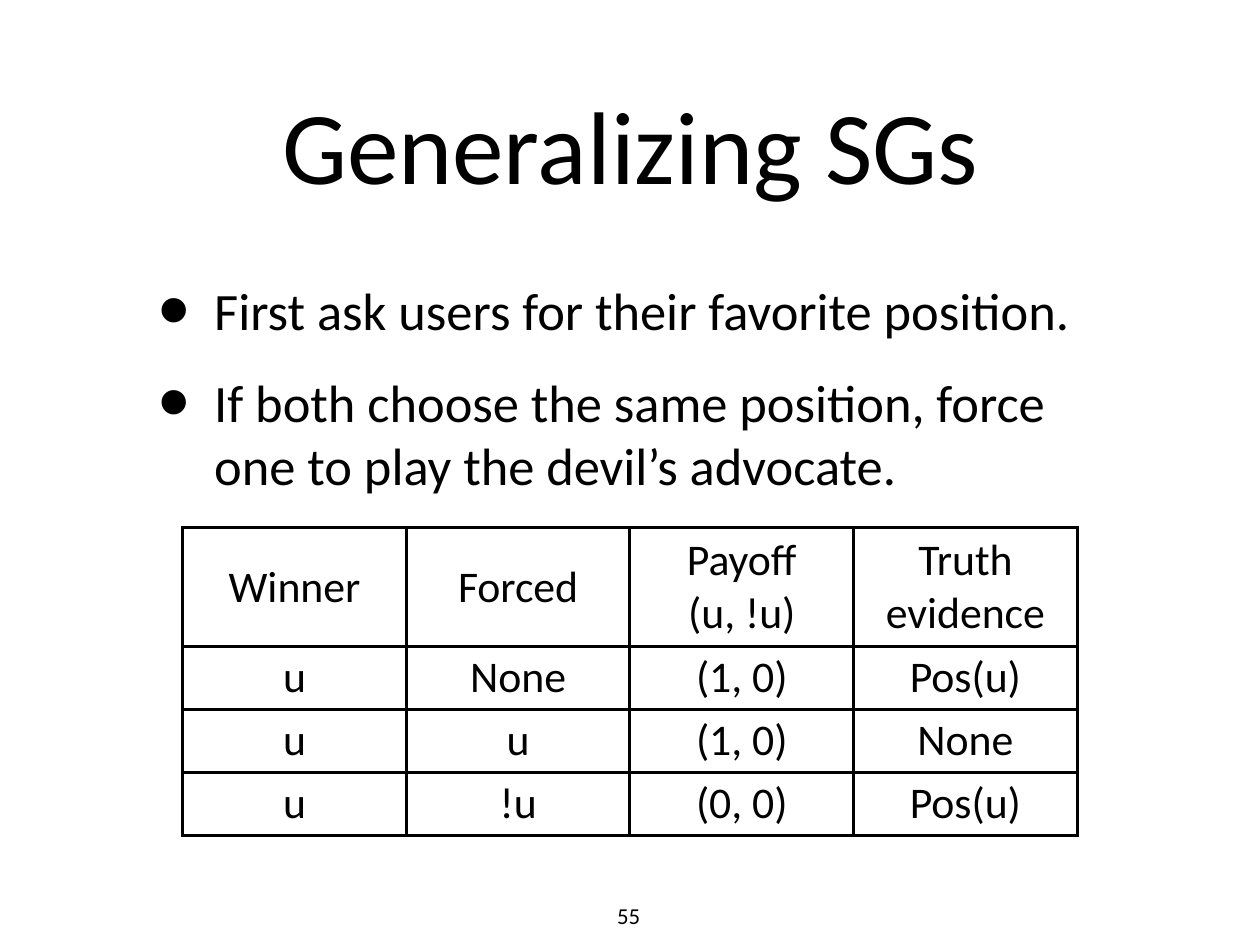
from dataclasses import dataclass

from lxml.etree import SubElement
from pptx import Presentation
from pptx.dml.color import RGBColor
from pptx.enum.text import MSO_ANCHOR, MSO_AUTO_SIZE, PP_ALIGN
from pptx.oxml import parse_xml
from pptx.oxml.ns import nsdecls, qn
from pptx.util import Inches, Pt

SLIDE_WIDTH, SLIDE_HEIGHT = Inches(10), Inches(7.5)


@dataclass(frozen=True)
class Theme:
    font: str = "Calibri"
    ink: str = "000000"
    paper: str = "FFFFFF"
    title_size: float = 59
    body_size: float = 30
    cell_size: float = 25
    number_size: float = 13
    border_width: float = 2
    bullet_percent: int = 171
    inset: float = 0.04


@dataclass(frozen=True)
class Box:
    """A rectangle in percent of the slide's width and height."""
    left: float
    top: float
    width: float
    height: float

    def lengths(self) -> tuple[int, int, int, int]:
        return (int(SLIDE_WIDTH * self.left / 100), int(SLIDE_HEIGHT * self.top / 100),
                int(SLIDE_WIDTH * self.width / 100), int(SLIDE_HEIGHT * self.height / 100))


THEME = Theme()
TITLE_BOX = Box(9.8, 2.67, 80.5, 25.07)
BODY_BOX = Box(9.8, 28.4, 80.5, 25.07)
TABLE_BOX = Box(14.5, 55.87, 71, 32.53)
NUMBER_BOX = Box(48.6, 94.93, 2.6, 3.73)

BULLETS = (
    "First ask users for their favorite position.",
    "If both choose the same position, force one to play the devil’s advocate.",
)
PAYOFF_ROWS = (
    ("Winner", "Forced", "Payoff\n(u, !u)", "Truth evidence"),
    ("u", "None", "(1, 0)", "Pos(u)"),
    ("u", "u", "(1, 0)", "None"),
    ("u", "!u", "(0, 0)", "Pos(u)"),
)
HEADER_SHARE = 0.385  # share of the table's height


def style_paragraphs(text_frame, size: float, alignment=PP_ALIGN.CENTER) -> None:
    for paragraph in text_frame.paragraphs:
        paragraph.alignment = alignment
        paragraph.font.name = THEME.font
        paragraph.font.size = Pt(size)
        paragraph.font.color.rgb = RGBColor.from_string(THEME.ink)


def set_insets(target, horizontal: float, vertical: float) -> None:
    target.margin_left = target.margin_right = Inches(horizontal)
    target.margin_top = target.margin_bottom = Inches(vertical)


def place(shape, box: Box) -> None:
    shape.left, shape.top, shape.width, shape.height = box.lengths()


def fill_placeholder(shape, box: Box, text: str):
    place(shape, box)
    text_frame = shape.text_frame
    text_frame.text = text
    text_frame.word_wrap = True
    text_frame.auto_size = MSO_AUTO_SIZE.NONE
    text_frame.vertical_anchor = MSO_ANCHOR.MIDDLE
    set_insets(text_frame, THEME.inset, THEME.inset)
    return text_frame


def add_bullet(paragraph) -> None:
    paragraph.space_before = Pt(16.9)
    properties = paragraph._p.get_or_add_pPr()
    properties.set("marL", str(Inches(0.68)))
    properties.set("indent", str(Inches(-0.44)))
    SubElement(properties, qn("a:buSzPct"), val=str(THEME.bullet_percent * 1000))
    SubElement(properties, qn("a:buChar"), char="•")


def add_borders(cell) -> None:
    properties = cell._tc.get_or_add_tcPr()
    for position, side in enumerate("LRTB"):
        properties.insert(position, parse_xml(
            f'<a:ln{side} {nsdecls("a")} w="{Pt(THEME.border_width)}"><a:solidFill>'
            f'<a:srgbClr val="{THEME.ink}"/></a:solidFill></a:ln{side}>'))


def add_payoff_table(slide) -> None:
    columns = len(PAYOFF_ROWS[0])
    frame = slide.shapes.add_table(len(PAYOFF_ROWS), columns, *TABLE_BOX.lengths())
    table, height = frame.table, frame.height
    table.first_row = table.horz_banding = False
    header_height = int(height * HEADER_SHARE)
    for index, row in enumerate(table.rows):
        row.height = (height - header_height) // (len(PAYOFF_ROWS) - 1) if index else header_height
        for cell, text in zip(row.cells, PAYOFF_ROWS[index]):
            cell.text = text
            cell.vertical_anchor = MSO_ANCHOR.MIDDLE
            set_insets(cell, THEME.inset, THEME.inset)
            cell.fill.background()
            add_borders(cell)
            style_paragraphs(cell.text_frame, THEME.cell_size)


def add_page_number(slide, number: str) -> None:
    text_frame = slide.shapes.add_textbox(*NUMBER_BOX.lengths()).text_frame
    text_frame.text = number
    text_frame.word_wrap = False
    # No side insets, so that both digits fit on one line
    set_insets(text_frame, 0, THEME.inset)
    style_paragraphs(text_frame, THEME.number_size)


def main() -> None:
    presentation = Presentation()
    presentation.slide_width, presentation.slide_height = SLIDE_WIDTH, SLIDE_HEIGHT
    slide = presentation.slides.add_slide(presentation.slide_layouts[1])
    slide.background.fill.solid()
    slide.background.fill.fore_color.rgb = RGBColor.from_string(THEME.paper)

    # Page number
    add_page_number(slide, "55")

    # Title
    title = fill_placeholder(slide.shapes.title, TITLE_BOX, "Generalizing SGs")
    style_paragraphs(title, THEME.title_size)

    # Bulleted list
    body = fill_placeholder(slide.placeholders[1], BODY_BOX, "\n".join(BULLETS))
    for paragraph in body.paragraphs:
        add_bullet(paragraph)
    style_paragraphs(body, THEME.body_size, PP_ALIGN.LEFT)

    # Payoff table
    add_payoff_table(slide)

    presentation.save("out.pptx")


if __name__ == "__main__":
    main()
